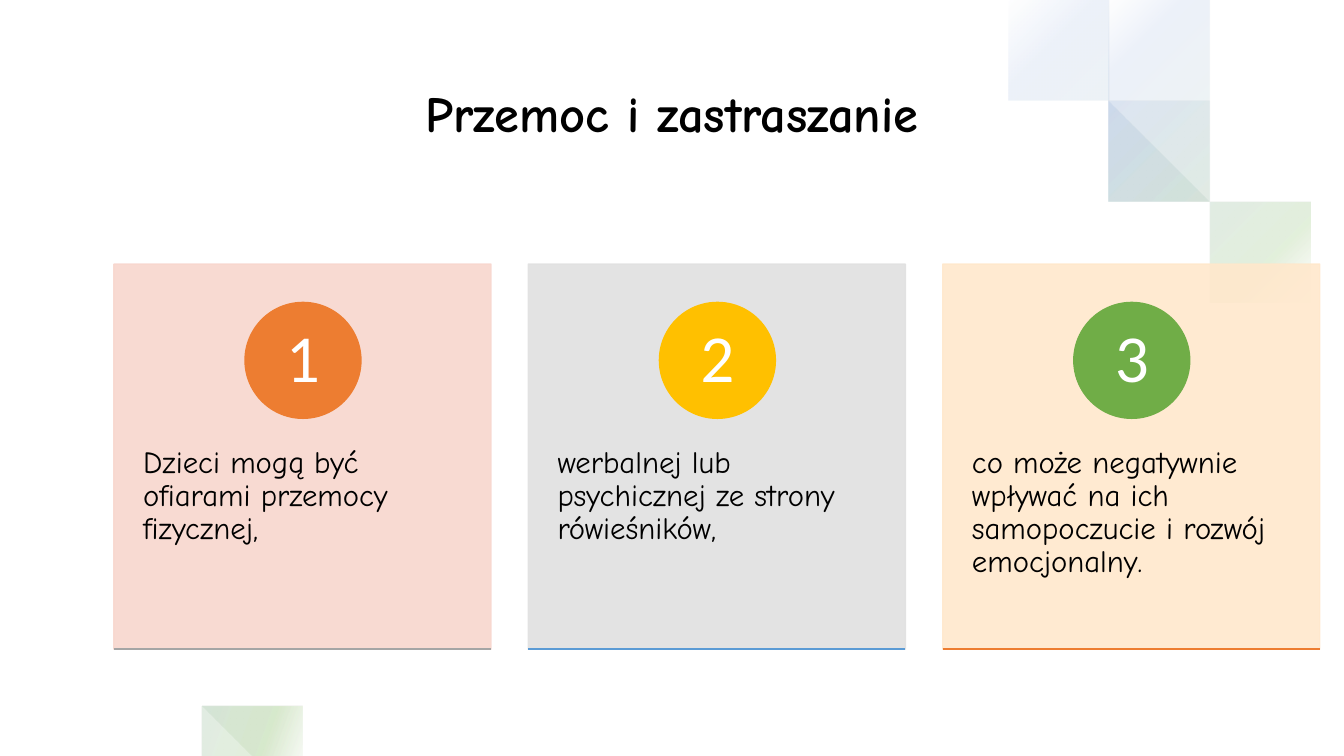
"""Builds a slide on violence and bullying with three numbered cards."""
from pptx import Presentation
from pptx.dml.color import RGBColor
from pptx.enum import shapes, text
from pptx.oxml import ns, xmlchemy
from pptx.util import Inches, Pt

COLORS = {
    "white": "FFFFFF", "black": "000000", "blue": "4472C4", "green": "70AD47",
    "orange": "ED7D31", "gold": "FFC000", "gray": "A5A5A5", "sky": "5B9BD5",
    "pink": "F8D7CE", "silver": "E1E1E1", "peach": "FFE8CC",
}
RIBBON_STOPS = [(2, "white"), (16, "green"), (85, "blue"), (100, "white")]
CURVE_STEPS = 32


def curve_points(start, first, second, end):
    """Sample a cubic curve as points in inches."""
    points = []
    for step in range(CURVE_STEPS + 1):
        t = step / CURVE_STEPS
        weights = ((1 - t) ** 3, 3 * t * (1 - t) ** 2, 3 * t * t * (1 - t), t ** 3)
        points.append(tuple(
            sum(weight * point[axis] for weight, point in zip(weights, (start, first, second, end)))
            for axis in (0, 1)))
    return points


def write_text(shape, words, font, size, color, align, anchor, margins):
    """Put one formatted paragraph into a shape."""
    frame = shape.text_frame
    frame.text = words
    frame.word_wrap = True
    frame.vertical_anchor = anchor
    frame.margin_left = frame.margin_right = Inches(margins[0])
    frame.margin_top = frame.margin_bottom = Inches(margins[1])
    paragraph = frame.paragraphs[0]
    paragraph.alignment = align
    paragraph.line_spacing = 0.9
    run = paragraph.runs[0]
    run.font.name = font
    run.font.size = Pt(size)
    run.font.color.rgb = RGBColor.from_string(COLORS[color])
    return run


presentation = Presentation()
presentation.slide_width = Inches(13.33)
presentation.slide_height = Inches(7.5)
slide = presentation.slides.add_slide(presentation.slide_layouts[5])
slide.background.fill.solid()
slide.background.fill.fore_color.rgb = RGBColor.from_string(COLORS["white"])

top_wide = [(10.67, 0), (10.92, 1.45), (11.9, 2.82), (13.33, 3.32)]
bottom_wide = [(0, 5.72), (1.2, 5.43), (2.53, 6.4), (2.63, 7.5)]
ribbons = [
    (135, [(10.36, 0), (10.53, 1.45), (11.7, 2.97), (13.33, 3.35)],
     [(10.68, 0), (10.83, 1.25), (11.85, 2.8), (13.33, 3.28)]),
    (135, top_wide, [(11.41, 0), (11.58, 0.95), (12.3, 2.05), (13.33, 2.51)]),
    (135, [(10.63, 0), (10.83, 1.3), (11.75, 2.92), (13.33, 3.33)],
     [(10.96, 0), (11.13, 1.2), (12, 2.62), (13.33, 3.08)]),
    (135, top_wide, [(11.29, 0), (11.45, 1), (12.2, 2.15), (13.33, 2.64)]),
    (160, bottom_wide, [(0, 6.13), (0.95, 5.9), (2.1, 6.6), (2.2, 7.5)]),
    (160, bottom_wide, [(0, 6.06), (0.97, 5.8), (2.17, 6.55), (2.28, 7.5)]),
    (160, [(0, 5.71), (1.2, 5.45), (2.5, 6.25), (2.63, 7.5)],
     [(0, 5.88), (1.1, 5.63), (2.4, 6.37), (2.51, 7.5)]),
    (160, [(0, 5.59), (1.2, 5.3), (2.5, 6.1), (2.64, 7.5)],
     [(0, 5.72), (1.15, 5.47), (2.45, 6.23), (2.62, 7.5)]),
]
for angle, outer, inner in ribbons:
    outline = curve_points(*outer) + curve_points(*inner)[::-1]
    builder = slide.shapes.build_freeform(*outline[0], scale=Inches(1))
    builder.add_line_segments(outline[1:], close=True)
    ribbon = builder.convert_to_shape()
    ribbon.shadow.inherit = False
    ribbon.line.fill.background()
    ribbon.fill.gradient()
    ribbon.fill.gradient_angle = angle
    stop_list = ribbon._element.spPr.find(".//" + ns.qn("a:gsLst"))
    for stop in list(stop_list):
        stop_list.remove(stop)
    for position, color in RIBBON_STOPS:
        stop = xmlchemy.OxmlElement("a:gs")
        stop.set("pos", str(position * 1000))
        stop_color = xmlchemy.OxmlElement("a:srgbClr")
        stop_color.set("val", COLORS[color])
        alpha = xmlchemy.OxmlElement("a:alpha")
        alpha.set("val", "10000")
        stop_color.append(alpha)
        stop.append(stop_color)
        stop_list.append(stop)

title = slide.shapes.title
title.left, title.top, title.width, title.height = map(Inches, (0.88, 0.5, 11.57, 1.3))
title_run = write_text(title, "Przemoc i zastraszanie", "Comic Neue", 36, "black",
                       text.PP_ALIGN.CENTER, text.MSO_ANCHOR.MIDDLE, (0.1, 0.05))
title_run.font.bold = True

cards = [
    ("Dzieci mogą być ofiarami przemocy fizycznej,", "pink", "orange", "gray"),
    ("werbalnej lub psychicznej ze strony rówieśników,", "silver", "gold", "sky"),
    ("co może negatywnie wpływać na ich samopoczucie i rozwój emocjonalny.",
     "peach", "green", "orange"),
]
for index, (words, card_color, badge_color, rule_color) in enumerate(cards):
    left = 1.13 + index * 4.11
    card = slide.shapes.add_shape(shapes.MSO_SHAPE.RECTANGLE, Inches(left), Inches(2.62),
                                  Inches(3.74), Inches(3.82))
    badge = slide.shapes.add_shape(shapes.MSO_SHAPE.OVAL, Inches(left + 1.3), Inches(3),
                                   Inches(1.15), Inches(1.15))
    for shape, color in ((card, card_color), (badge, badge_color)):
        shape.shadow.inherit = False
        shape.fill.solid()
        shape.fill.fore_color.rgb = RGBColor.from_string(COLORS[color])
        shape.line.color.rgb = RGBColor.from_string(COLORS[color])
        shape.line.width = Pt(1)
    for card_fill in card._element.spPr.iter(ns.qn("a:srgbClr")):
        alpha = xmlchemy.OxmlElement("a:alpha")
        alpha.set("val", "90000")
        card_fill.append(alpha)

    body = slide.shapes.add_textbox(Inches(left), Inches(4.07), Inches(3.74), Inches(2.29))
    write_text(body, words, "Comic Neue", 22, "black", text.PP_ALIGN.LEFT,
               text.MSO_ANCHOR.TOP, (0.29, 0.36))
    number = slide.shapes.add_textbox(Inches(left + 1.47), Inches(3.17),
                                      Inches(0.81), Inches(0.81))
    write_text(number, str(index + 1), "Calibri", 48, "white", text.PP_ALIGN.CENTER,
               text.MSO_ANCHOR.MIDDLE, (0.09, 0.01))

    rule = slide.shapes.add_connector(shapes.MSO_CONNECTOR.STRAIGHT, Inches(left), Inches(6.44),
                                      Inches(left + 3.74), Inches(6.44))
    rule.line.color.rgb = RGBColor.from_string(COLORS[rule_color])
    rule.line.width = Pt(1)
    rule._element.spPr.append(xmlchemy.OxmlElement("a:effectLst"))

presentation.save("out.pptx")
